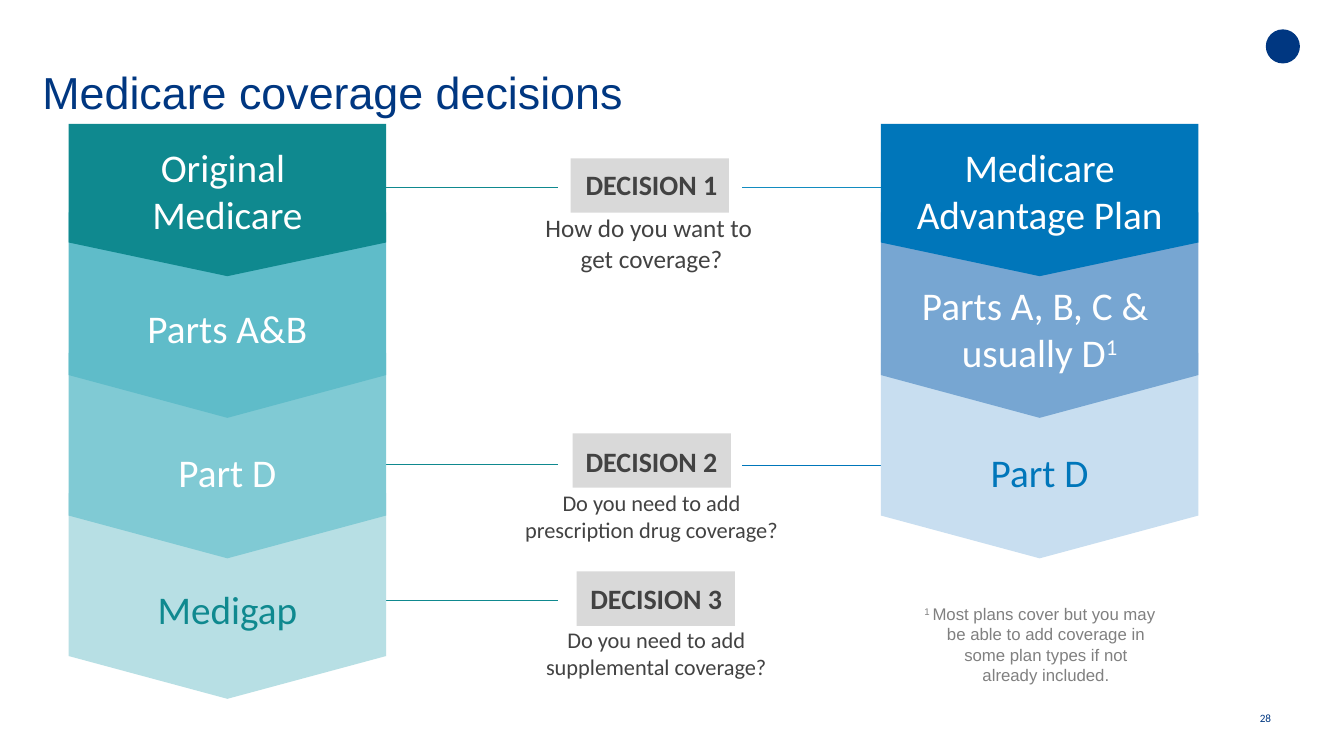
from pptx import Presentation, util as u
from pptx.dml.color import RGBColor
from pptx.enum import shapes, text
from pptx.oxml import ns
from lxml import etree

COLORS = {
    "navy": "003781", "teal": "0F898F", "teal2": "5FBCC9", "teal3": "80CAD4",
    "teal4": "B7DFE4", "blue": "0076BA", "blue2": "77A6D2", "blue3": "C8DEF0",
    "sky": "138CC0", "box": "D9D9D9", "dark": "424242", "gray": "808080",
    "white": "FFFFFF",
}
BAND_W = 8
LEFT_X, RIGHT_X = 5.73, 26.2          # column centres
BAND_Y = [5.04, 7.94, 11.48, 15.02]   # band centres by level
LABEL_Y = [4.79, 8.27, 11.88, 15.33]  # label centres by level


def rgb(name):
    return RGBColor.from_string(COLORS[name])


def add_shape(slide, kind, x, y, w, h, color):
    s = slide.shapes.add_shape(kind, u.Cm(x), u.Cm(y), u.Cm(w), u.Cm(h))
    s.shadow.inherit = False
    s.fill.solid()
    s.fill.fore_color.rgb = rgb(color)
    s.line.fill.background()
    return s


def add_box(slide, x, y, w, h, anchor=text.MSO_ANCHOR.MIDDLE, inset=(0, 0)):
    tf = slide.shapes.add_textbox(u.Cm(x), u.Cm(y), u.Cm(w), u.Cm(h)).text_frame
    tf.word_wrap = True
    tf.vertical_anchor = anchor
    tf.margin_left = tf.margin_right = u.Cm(inset[0])
    tf.margin_top = tf.margin_bottom = u.Cm(inset[1])
    return tf


def style(p, size, color, font="Calibri", bold=False, centred=True, before=0, after=0):
    p.font.size = u.Pt(size)
    p.font.name = font
    p.font.bold = bold
    p.font.color.rgb = rgb(color)
    p.alignment = text.PP_ALIGN.CENTER if centred else text.PP_ALIGN.LEFT
    p.space_before, p.space_after = u.Pt(before), u.Pt(after)


def add_run(p, words, size, color, font, raised=False):
    r = p.add_run()
    r.text = words
    r.font.size = u.Pt(size)
    r.font.name = font
    r.font.color.rgb = rgb(color)
    if raised:
        r.font._element.set("baseline", "30000")


def add_line(slide, x1, x2, y, color):
    s = slide.shapes.add_connector(
        shapes.MSO_CONNECTOR.STRAIGHT, u.Cm(x1), u.Cm(y), u.Cm(x2), u.Cm(y))
    s.line.color.rgb = rgb(color)
    s.line.width = u.Pt(0.75)
    etree.SubElement(s._element.spPr, ns.qn("a:effectLst"))


def add_band(slide, cx, level, words, fill, color, note=""):
    if level == 0:
        kind, length, point = shapes.MSO_SHAPE.PENTAGON, 3.84, 0.221
    else:
        kind, length, point = shapes.MSO_SHAPE.CHEVRON, 5.18, 0.208
    s = add_shape(slide, kind, cx - length / 2, BAND_Y[level] - BAND_W / 2,
                  length, BAND_W, fill)
    s.rotation = 90
    s.adjustments[0] = point
    tf = add_box(slide, cx - BAND_W / 2, LABEL_Y[level] - 1.13, BAND_W, 2.26)
    p = tf.paragraphs[0]
    p.text = words
    style(p, 28, color, before=2, after=2)
    if note:
        add_run(p, note, 28, color, "Calibri", raised=True)


def add_decision(slide, box_x, box_y, cx, y, w, title, question, size, gaps):
    add_shape(slide, shapes.MSO_SHAPE.RECTANGLE, box_x, box_y, 3.99, 1.37, "box")
    tf = add_box(slide, cx - w / 2, y, w, 1.98)
    p = tf.paragraphs[0]
    p.text = title
    style(p, 20, "dark", bold=True, before=2, after=gaps[0])
    p = tf.add_paragraph()
    p.text = question
    style(p, size, "dark", before=gaps[1], after=2)


def add_footnote(slide):
    tf = add_box(slide, 23.01, 15.09, 6.4, 2.31, text.MSO_ANCHOR.TOP, (0.25, 0.13))
    p = tf.paragraphs[0]
    p.alignment = text.PP_ALIGN.CENTER
    pPr = p._p.get_or_add_pPr()
    pPr.set("marL", str(u.Cm(0.3)))
    pPr.set("indent", str(-u.Cm(0.3)))
    add_run(p, "1 ", 12, "gray", "Arial", raised=True)
    add_run(p, "Most plans cover but you may be able to add coverage in some "
               "plan types if not already included.", 12, "gray", "Arial")


def main():
    prs = Presentation()
    prs.slide_width, prs.slide_height = u.Cm(33.87), u.Cm(19.05)
    slide = prs.slides.add_slide(prs.slide_layouts[6])

    # Corner mark
    add_shape(slide, shapes.MSO_SHAPE.OVAL, 31.9, 0.74, 0.86, 0.86, "navy")

    # Lines from the columns to the decisions
    for x1, x2, y, color in [
        (14.05, 9.58, 15.14, "teal"), (14.05, 9.09, 4.72, "teal"),
        (14.05, 9.58, 11.71, "teal"), (22.86, 18.69, 4.72, "sky"),
        (22.53, 18.69, 11.73, "blue"),
    ]:
        add_line(slide, x1, x2, y, color)

    # Coverage columns, lowest band first so that each point overlaps the next
    for band in [
        (LEFT_X, 3, "Medigap", "teal4", "teal"),
        (RIGHT_X, 2, "Part D", "blue3", "blue"),
        (LEFT_X, 2, "Part D", "teal3", "white"),
        (RIGHT_X, 1, "Parts A, B, C & \vusually D", "blue2", "white", "1"),
        (LEFT_X, 1, "Parts A&B", "teal2", "white"),
        (LEFT_X, 0, "Original \vMedicare", "teal", "white"),
        (RIGHT_X, 0, "Medicare Advantage Plan", "blue", "white"),
    ]:
        add_band(slide, *band)

    # Title and page number
    tf = add_box(slide, 1.07, 0.74, 30.43, 2.26, text.MSO_ANCHOR.BOTTOM)
    p = tf.paragraphs[0]
    p.text = "Medicare coverage decisions"
    p.line_spacing = 0.9
    style(p, 32, "navy", "Arial", centred=False)
    p = add_box(slide, 31.75, 17.58, 1.02, 1.02, inset=(0, 0.15)).paragraphs[0]
    p.text = "28"
    style(p, 8, "navy", centred=False)

    # Decisions
    for decision in [
        (14.38, 3.99, 16.42, 4.57, 9.32, "DECISION 1",
         "How do you want to \vget coverage?", 18, (6, 2)),
        (14.43, 10.92, 16.42, 11.46, 7.29, "DECISION 2",
         "Do you need to add prescription drug coverage?", 16, (2, 6)),
        (14.53, 14.4, 16.54, 14.91, 6.55, "DECISION 3",
         "Do you need to add supplemental coverage?", 16, (2, 6)),
    ]:
        add_decision(slide, *decision)

    add_footnote(slide)
    prs.save("out.pptx")


if __name__ == "__main__":
    main()
